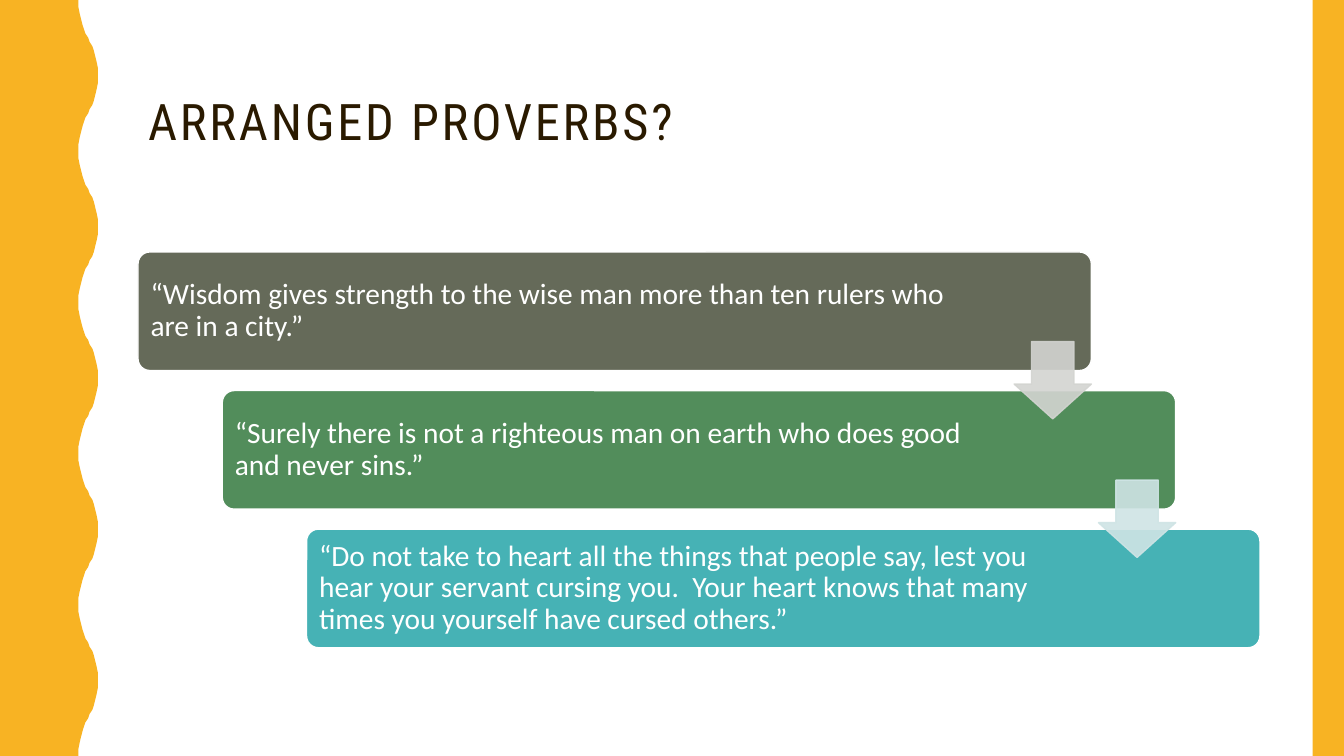
from pptx import Presentation
from pptx.dml.color import RGBColor
from pptx.enum.shapes import MSO_SHAPE as Kind
from pptx.enum.text import MSO_ANCHOR as Anchor, MSO_AUTO_SIZE as Fit, PP_ALIGN as Align
from pptx.oxml.ns import qn
from pptx.oxml.xmlchemy import OxmlElement as Element
from pptx.util import Pt

WHITE = RGBColor(0xFF, 0xFF, 0xFF)
BROWN = RGBColor(0x2A, 0x1A, 0x00)
GOLD = RGBColor(0xF8, 0xB3, 0x23)
OLIVE = RGBColor(0x65, 0x6A, 0x59)
GREEN = RGBColor(0x52, 0x8D, 0x5B)
TEAL = RGBColor(0x46, 0xB2, 0xB5)
GREY = RGBColor(0xD3, 0xD4, 0xD1)
MINT = RGBColor(0xCF, 0xE4, 0xE5)

WIDE, HIGH = 960, 540
STEP_X, STEP_Y = 60.2, 99


def paint(shape, fill, line=None):
    shape.shadow.inherit = False
    shape.fill.solid()
    shape.fill.fore_color.rgb = fill
    if line is None:
        shape.line.fill.background()
    else:
        shape.line.color.rgb = line
        shape.line.width = Pt(1)


def write(frame, text, font, size, color):
    """Put one left-aligned run in the middle of a text frame."""
    frame.word_wrap = True
    frame.auto_size = Fit.NONE
    frame.vertical_anchor = Anchor.MIDDLE
    para = frame.paragraphs[0]
    para.alignment = Align.LEFT
    para.line_spacing = 0.9
    run = para.add_run()
    run.text = text
    run.font.name = font
    run.font.size = Pt(size)
    run.font.color.rgb = color
    return run


deck = Presentation()
deck.slide_width, deck.slide_height = Pt(WIDE), Pt(HIGH)
slide = deck.slides.add_slide(deck.slide_layouts[5])
shapes = slide.shapes

# Title
title = shapes.title
title.left, title.top, title.width, title.height = Pt(98.6), Pt(30), Pt(801.4), Pt(117.4)
run = write(title.text_frame, "ARRANGED PROVERBS?", "Roboto Condensed", 36, BROWN)
run.font._element.set("spc", "200")

# Wavy left edge: half a wave, mirrored and repeated down the slide
WAVE = 108
half = [(56, 0), (56.3, 5), (57, 10), (57.8, 14.4), (58.6, 18), (59.8, 21),
        (61.2, 24), (62.7, 27), (64.2, 30), (65.6, 33), (67, 36),
        (68.2, 39.6), (69.2, 44), (69.8, 49), (70, 54)]
full = half + [(x, WAVE - y) for x, y in half[-2::-1]]
edge = [(x, y + top) for top in range(0, HIGH, WAVE) for x, y in full]
path = shapes.build_freeform(0, 0, scale=Pt(1))
path.add_line_segments(edge + [(0, HIGH)], close=True)
paint(path.convert_to_shape(), GOLD)

# Right band
band = shapes.add_shape(Kind.RECTANGLE, Pt(937.6), 0, Pt(22.4), Pt(HIGH))
paint(band, GOLD)

# Proverb cards, stepping down to the right
cards = [
    (OLIVE, 93, "“Wisdom gives strength to the wise man more than ten rulers who are in a city.”"),
    (GREEN, 121, "“Surely there is not a righteous man on earth who does good and never sins.”"),
    (TEAL, 121, "“Do not take to heart all the things that people say, lest you hear your "
                "servant cursing you.  Your heart knows that many times you yourself have "
                "cursed others.”"),
]
for i, (color, right, text) in enumerate(cards):
    card = shapes.add_shape(Kind.ROUNDED_RECTANGLE, Pt(98.6 + i * STEP_X),
                            Pt(180 + i * STEP_Y), Pt(681), Pt(84.7))
    card.adjustments[0] = 0.1
    paint(card, color, WHITE)
    frame = card.text_frame
    frame.margin_left, frame.margin_right = Pt(6.5), Pt(right)
    frame.margin_top = frame.margin_bottom = 0
    write(frame, text, "Calibri", 21, WHITE)

# Arrows from card to card
for i, color in enumerate([GREY, MINT]):
    arrow = shapes.add_shape(Kind.DOWN_ARROW, Pt(724.4 + i * STEP_X),
                             Pt(244 + i * STEP_Y), Pt(55.2), Pt(55.2))
    arrow.adjustments[0] = 0.55
    arrow.adjustments[1] = 0.45
    paint(arrow, color, color)
    for tint in arrow.element.spPr.iter(qn("a:srgbClr")):
        alpha = Element("a:alpha")
        alpha.set("val", "90000")
        tint.append(alpha)

deck.save("out.pptx")
